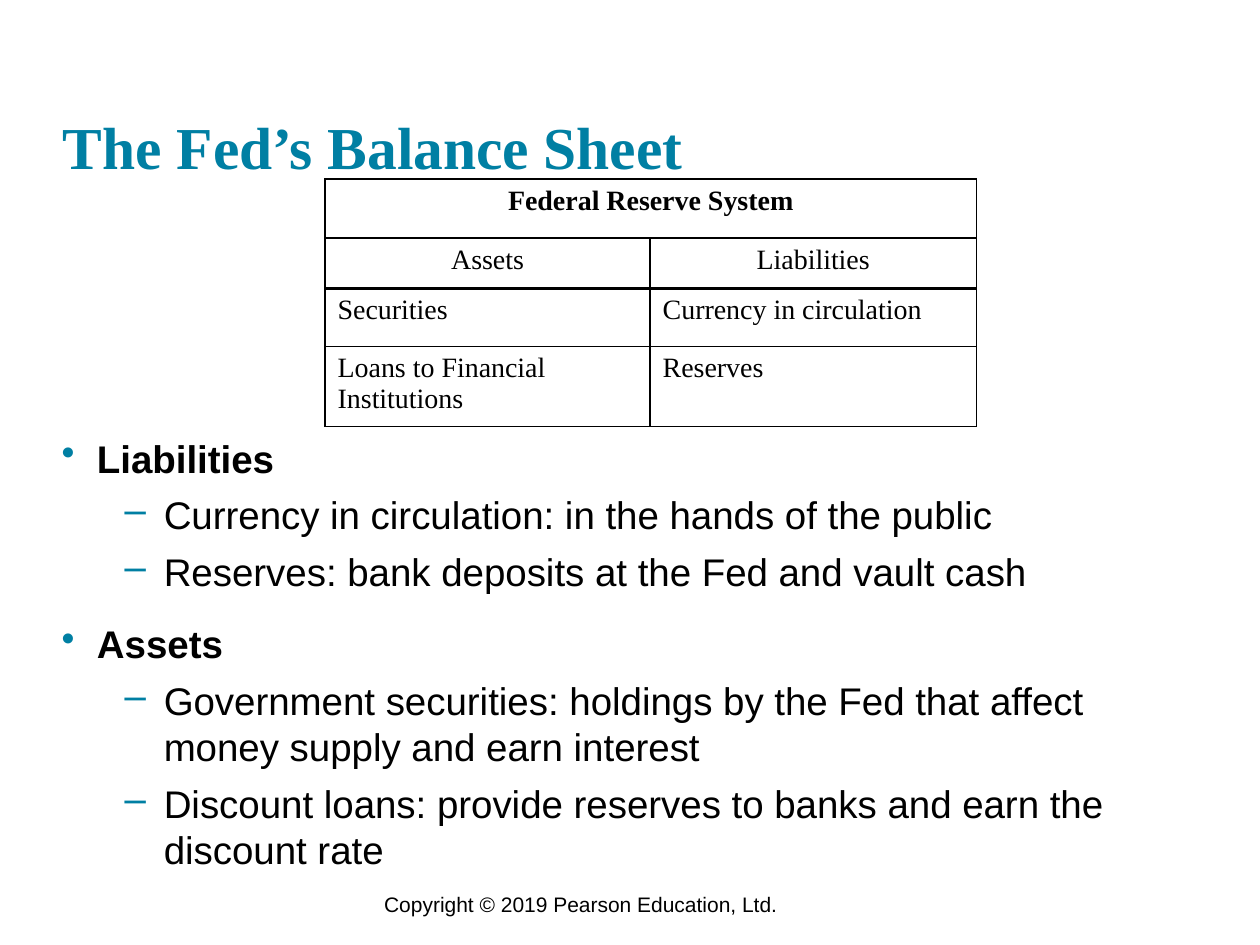
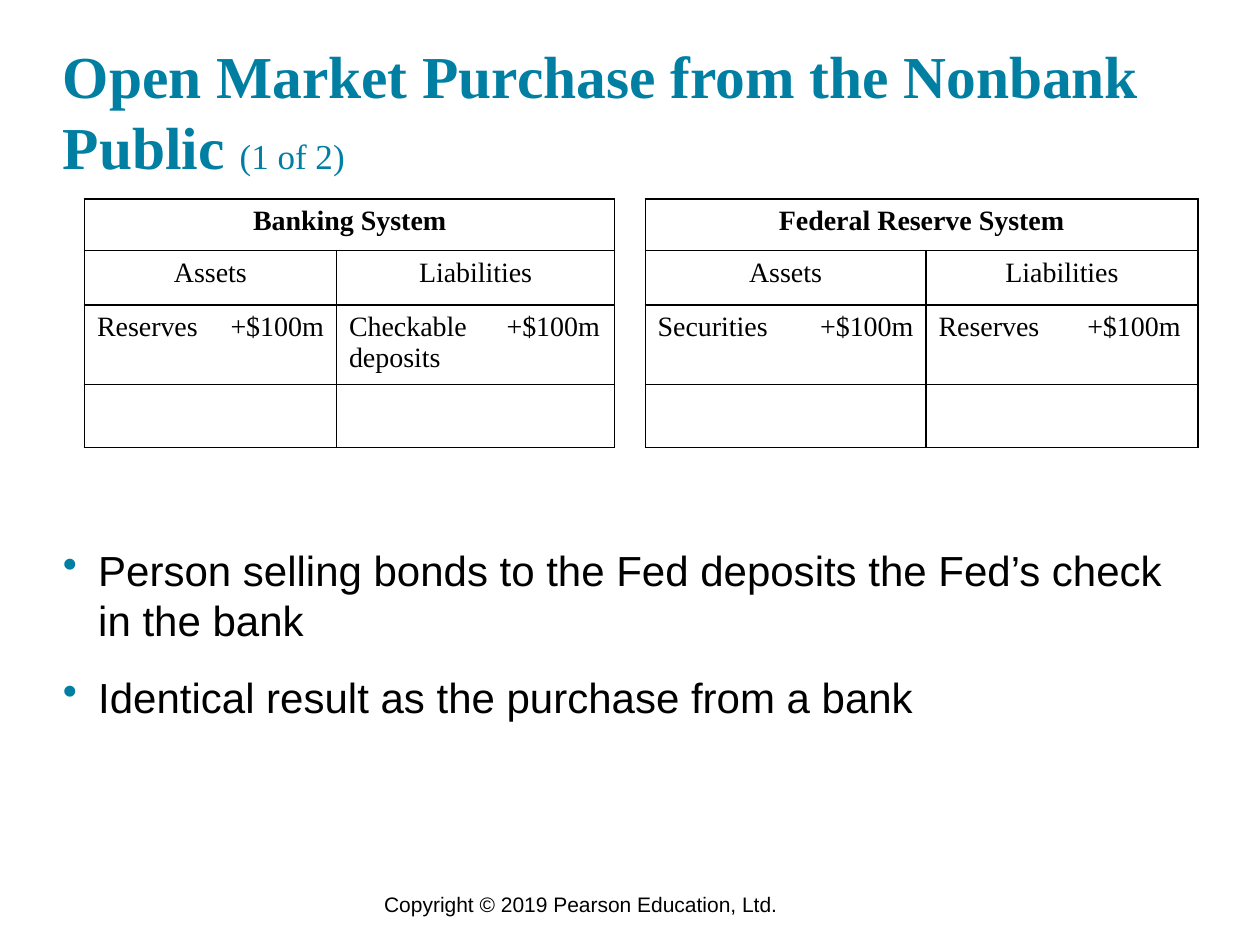
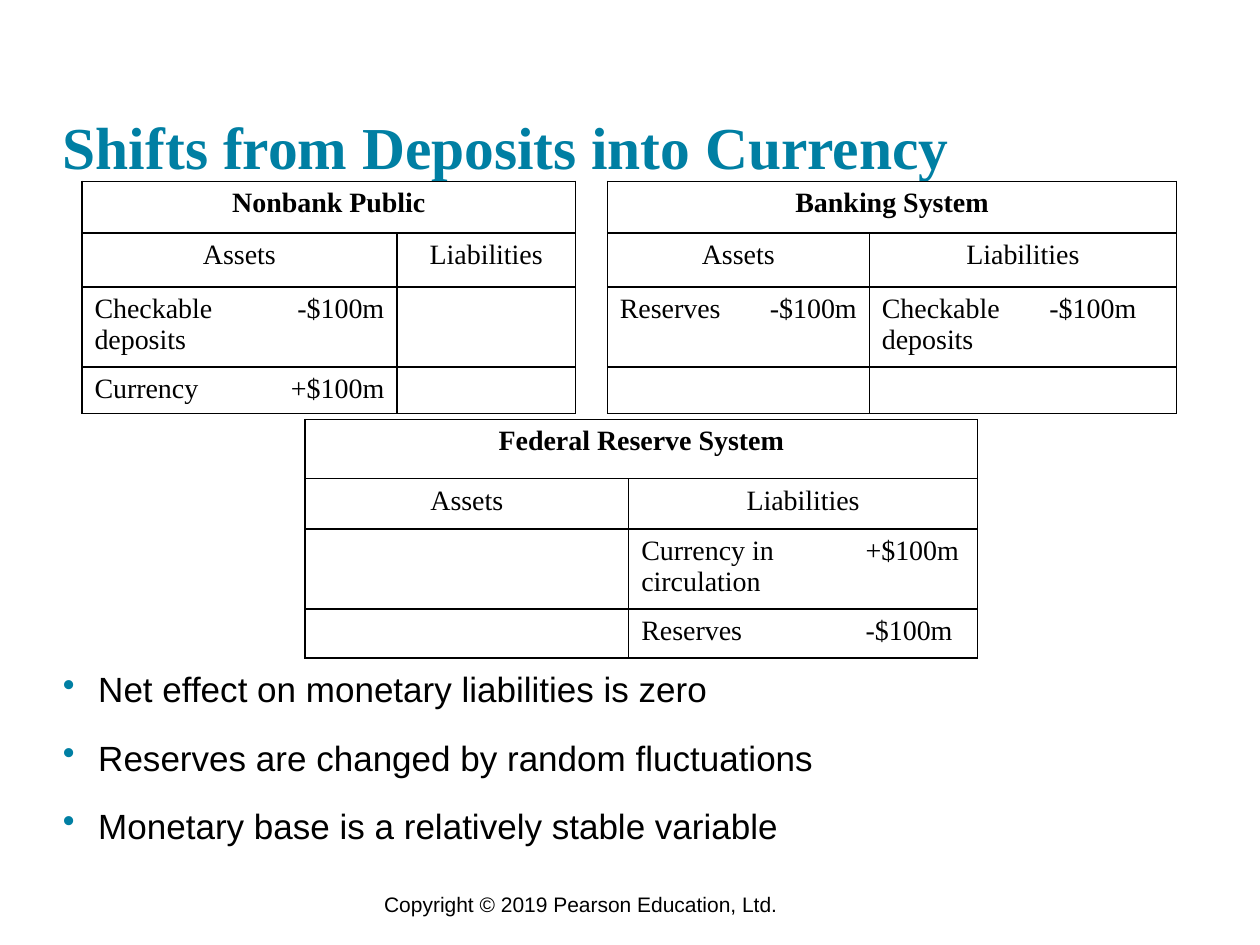
from pptx import Presentation
from pptx.dml.color import RGBColor
from pptx.enum.text import MSO_ANCHOR, PP_ALIGN
from pptx.oxml.ns import qn
from pptx.util import Inches, Pt
from lxml import etree

LEFT, CENTER, RIGHT = PP_ALIGN.LEFT, PP_ALIGN.CENTER, PP_ALIGN.RIGHT
TOP, BOTTOM = MSO_ANCHOR.TOP, MSO_ANCHOR.BOTTOM

WIDE, HIGH = 10, 7.5
EDGE = WIDE / 20
SPAN = WIDE - 2 * EDGE

THEME = {
    "teal": "007FA3", "ink": "000000",
    "serif": "Times New Roman", "sans": "Arial",
    "title": 34, "part": 20, "cell": 16, "foot": 12,
    "line": 1, "thick": 1.5, "thin": 0.5,
    "plain": "{2D5ABB26-0587-4C30-8999-92F81FD0307C}",
}
LEVELS = [
    {"mark": "•", "left": 0.28, "hang": 0.28, "before": 15},
    {"mark": "–", "left": 0.81, "hang": 0.31, "before": 6},
]
FOOT = "Copyright © 2019 Pearson Education, Ltd."
HEADS = ("Assets", "Liabilities")

SLIDES = [
    {
        "title": "The Fed’s Balance Sheet",
        "body": {"left": 0.49, "top": 3.45, "high": 3.47, "size": 22, "items": [
            (0, "Liabilities", True),
            (1, "Currency in circulation: in the hands of the public", False),
            (1, "Reserves: bank deposits at the Fed and vault cash", False),
            (0, "Assets", True),
            (1, "Government securities: holdings by the Fed that affect "
                "money supply and earn interest", False),
            (1, "Discount loans: provide reserves to banks and earn the "
                "discount rate", False),
        ]},
        "tables": [{
            "at": (2.58, 1.42), "rows": (0.47, 0.4, 0.46, 0.63), "mid": 1.5,
            "books": [("Federal Reserve System", ((2.58,), (2.59,)), [
                ("Securities", "Currency in circulation"),
                ("Loans to Financial Institutions", "Reserves")])],
        }],
    },
    {
        "title": "Open Market Purchase from the Nonbank Public ",
        "part": "(1 of 2)",
        "body": {"top": 4.32, "high": 2.38, "size": 24, "items": [
            (0, "Person selling bonds to the Fed deposits the Fed’s check "
                "in the bank", False),
            (0, "Identical result as the purchase from a bank", False),
        ]},
        "tables": [{
            "at": (0.67, 1.58), "rows": (0.41, 0.43, 0.63, 0.5), "gap": 0.23,
            "books": [
                ("Banking System", ((1, 1), (1.25, 0.96)), [
                    ("Reserves", "+$100m", "Checkable deposits", "+$100m"),
                    ("",) * 4]),
                ("Federal Reserve System", ((1.15, 1.08), (1.18, 0.98)), [
                    ("Securities", "+$100m", "Reserves", "+$100m"),
                    ("",) * 4]),
            ],
        }],
    },
    {
        "title": "Shifts from Deposits into Currency",
        "body": {"top": 5.3, "high": 1.49, "size": 20, "items": [
            (0, "Net effect on monetary liabilities is zero", False),
            (0, "Reserves are changed by random fluctuations", False),
            (0, "Monetary base is a relatively stable variable", False),
        ]},
        "tables": [
            {
                "at": (0.65, 1.44), "rows": (0.41, 0.43, 0.63, 0.37), "gap": 0.25,
                "books": [
                    ("Nonbank Public", ((1.26, 1.24), (0.95, 0.47)), [
                        ("Checkable deposits", "-$100m", "", ""),
                        ("Currency", "+$100m", "", "")]),
                    ("Banking System", ((1.08, 1), (1.33, 1.11)), [
                        ("Reserves", "-$100m", "Checkable deposits", "-$100m"),
                        ("",) * 4]),
                ],
            },
            {
                "at": (2.42, 3.33), "rows": (0.47, 0.4, 0.63, 0.39),
                "books": [("Federal Reserve System", ((1.68, 0.89), (1.78, 0.99)), [
                    ("", "", "Currency in circulation", "+$100m"),
                    ("", "", "Reserves", "-$100m")])],
            },
        ],
    },
]


def write(para, text, size, font="sans", color="ink", bold=False, align=LEFT):
    para.alignment = align
    if not text:
        etree.SubElement(para._p, qn("a:endParaRPr"), sz=str(size * 100))
        return
    run = para.add_run()
    run.text = text
    run.font.size = Pt(size)
    run.font.name = THEME[font]
    run.font.bold = bold
    run.font.color.rgb = RGBColor.from_string(THEME[color])


def frame(slide, left, top, wide, high, inset=True, anchor=TOP):
    box = slide.shapes.add_textbox(*map(Inches, (left, top, wide, high)))
    text = box.text_frame
    text.word_wrap = True
    text.vertical_anchor = anchor
    if not inset:
        text.margin_left = text.margin_right = 0
        text.margin_top = text.margin_bottom = 0
    return text


def bullet(para, level):
    props = para._p.get_or_add_pPr()
    props.set("marL", str(Inches(level["left"])))
    props.set("indent", str(-Inches(level["hang"])))
    tint = etree.SubElement(props, qn("a:buClr"))
    etree.SubElement(tint, qn("a:srgbClr"), val=THEME["teal"])
    etree.SubElement(props, qn("a:buChar"), char=level["mark"])


def add_body(slide, body):
    left = body.get("left", EDGE)
    text = frame(slide, left, body["top"], SPAN, body["high"], inset=False)
    for i, (depth, words, bold) in enumerate(body["items"]):
        para = text.add_paragraph() if i else text.paragraphs[0]
        level = LEVELS[depth]
        bullet(para, level)
        if i:
            para.space_before = Pt(level["before"])
        write(para, words, body["size"], bold=bold)


def border(cell, sides):
    props = cell._tc.get_or_add_tcPr()
    for side in "LRTB":
        line = etree.SubElement(props, qn("a:ln" + side))
        if side in sides:
            line.set("w", str(Pt(sides[side])))
            fill = etree.SubElement(line, qn("a:solidFill"))
            etree.SubElement(fill, qn("a:srgbClr"), val=THEME["ink"])
        else:
            etree.SubElement(line, qn("a:noFill"))


def put(grid, row, col, text, sides, wide=1, **form):
    cell = grid.cell(row, col)
    border(cell, sides)
    if wide > 1:
        cell.merge(grid.cell(row, col + wide - 1))
    for i in range(1, wide):
        keep = "RTB" if i == wide - 1 else "TB"
        border(grid.cell(row, col + i), {side: sides[side] for side in keep})
    write(cell.text_frame.paragraphs[0], text, THEME["cell"], font="serif", **form)


def add_book(grid, start, book, left, right, mid):
    title, halves, lines = book
    line, thick = THEME["line"], THEME["thick"]
    total = sum(map(len, halves))
    put(grid, 0, start, title, {"L": left, "R": right, "T": line, "B": line},
        wide=total, bold=True, align=CENTER)
    first = 0
    for h, half in enumerate(halves):
        lead, tail = ((left, mid), (mid, right))[h]
        put(grid, 1, start + first, HEADS[h],
            {"L": lead, "R": tail, "T": line, "B": thick},
            wide=len(half), align=CENTER)
        for r, words in enumerate(lines, 2):
            for c in range(len(half)):
                sides = {"T": thick if r == 2 else line, "B": line}
                if c == 0:
                    sides["L"] = lead
                if c == len(half) - 1:
                    sides["R"] = tail
                put(grid, r, start + first + c, words[first + c], sides,
                    align=RIGHT if c and h == 0 else LEFT)
        first += len(half)
    return start + total


def add_grid(slide, spec):
    books, rows = spec["books"], spec["rows"]
    cols = []
    for i, (_, halves, _) in enumerate(books):
        cols += [spec["gap"]] if i else []
        cols += [wide for half in halves for wide in half]
    size = (*spec["at"], sum(cols), sum(rows))
    grid = slide.shapes.add_table(len(rows), len(cols), *map(Inches, size)).table
    grid.first_row = grid.horz_banding = False
    grid._tbl.tblPr.find(qn("a:tableStyleId")).text = THEME["plain"]
    for col, wide in zip(grid.columns, cols):
        col.width = Inches(wide)
    for row, high in zip(grid.rows, rows):
        row.height = Inches(high)
    start = 0
    for i, book in enumerate(books):
        if i:
            for r in range(len(rows)):
                put(grid, r, start, "", {"L": THEME["thin"], "R": THEME["thin"]})
            grid.cell(0, start).merge(grid.cell(len(rows) - 2, start))
            start += 1
        left = THEME["thin"] if i else THEME["line"]
        right = THEME["thin"] if i < len(books) - 1 else THEME["line"]
        start = add_book(grid, start, book, left, right, spec.get("mid", THEME["line"]))
    for cell in grid.iter_cells():
        cell.fill.background()


def add_slide(deck, data):
    slide = deck.slides.add_slide(deck.slide_layouts[6])
    foot = frame(slide, 2.95, 7.03, 6.75, 0.3)
    write(foot.paragraphs[0], FOOT, THEME["foot"])
    head = frame(slide, EDGE, 0.24, SPAN, 1.2, inset=False, anchor=BOTTOM).paragraphs[0]
    write(head, data["title"], THEME["title"], font="serif", color="teal", bold=True)
    if "part" in data:
        write(head, data["part"], THEME["part"], font="serif", color="teal")
    add_body(slide, data["body"])
    for spec in data["tables"]:
        add_grid(slide, spec)


def main():
    deck = Presentation()
    deck.slide_width, deck.slide_height = Inches(WIDE), Inches(HIGH)
    for data in SLIDES:
        add_slide(deck, data)
    deck.save("out.pptx")


if __name__ == "__main__":
    main()
